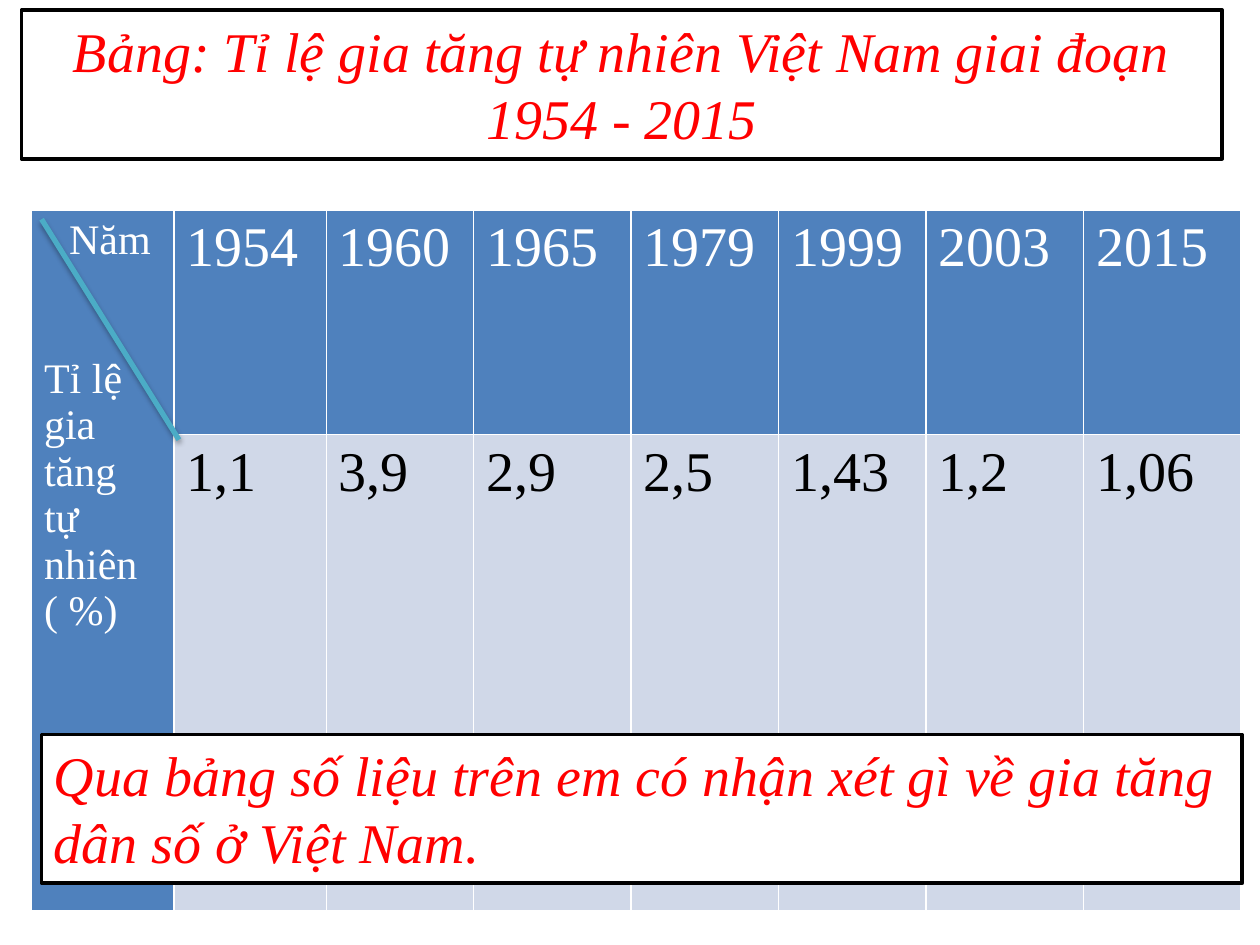
import lxml.etree
import pptx
import pptx.dml.color
import pptx.enum.shapes
import pptx.enum.text
import pptx.oxml
import pptx.oxml.ns
import pptx.util

Inches = pptx.util.Inches
Pt = pptx.util.Pt
ALIGN = pptx.enum.text.PP_ALIGN


def color(hex_string):
    return pptx.dml.color.RGBColor.from_string(hex_string)


def write(paragraph, text, size, hex_string, italic=False, align=ALIGN.LEFT):
    paragraph.text = text
    paragraph.alignment = align
    font = paragraph.font
    formats = {"name": "Times New Roman", "size": Pt(size), "bold": False, "italic": italic}
    for run_font in (font, paragraph.runs[0].font):
        for name, value in formats.items():
            setattr(run_font, name, value)
        run_font.color.rgb = color(hex_string)


presentation = pptx.Presentation()
presentation.slide_width = Inches(10)
presentation.slide_height = Inches(7.5)
slide = presentation.slides.add_slide(presentation.slide_layouts[5])

# Growth rate table
rates = {
    "1954": "1,1",
    "1960": "3,9",
    "1965": "2,9",
    "1979": "2,5",
    "1999": "1,43",
    "2003": "1,2",
    "2015": "1,06",
}
column_widths = [1.13, 1.21, 1.17, 1.25, 1.17, 1.17, 1.25, 1.25]
row_heights = [1.78, 3.78]
table = slide.shapes.add_table(
    len(row_heights), len(column_widths), Inches(0.25), Inches(1.67),
    Inches(sum(column_widths)), Inches(sum(row_heights)),
).table
for column, width in zip(table.columns, column_widths):
    column.width = Inches(width)
for row, height in zip(table.rows, row_heights):
    row.height = Inches(height)

for column_index, (year, rate) in enumerate(rates.items(), start=1):
    cells = [(year, "4F81BD", "FFFFFF"), (rate, "D0D8E8", "000000")]
    for row_index, (text, fill, text_color) in enumerate(cells):
        cell = table.cell(row_index, column_index)
        cell.fill.solid()
        cell.fill.fore_color.rgb = color(fill)
        write(cell.text_frame.paragraphs[0], text, 32, text_color)

corner = table.cell(0, 0)
corner.merge(table.cell(1, 0))
corner.fill.solid()
corner.fill.fore_color.rgb = color("4F81BD")
write(corner.text_frame.paragraphs[0], " Năm ", 24, "FFFFFF", align=ALIGN.RIGHT)
for text, space in [("Tỉ lệ gia tăng tự nhiên", 53), ("( %)", 0)]:
    paragraph = corner.text_frame.add_paragraph()
    write(paragraph, text, 24, "FFFFFF")
    paragraph.space_before = Pt(space)

# Diagonal of the corner cell
diagonal = slide.shapes.add_connector(
    pptx.enum.shapes.MSO_CONNECTOR.STRAIGHT,
    Inches(0.33), Inches(1.74), Inches(1.42), Inches(3.49),
)
diagonal.line.color.rgb = color("4BACC6")
diagonal.line.width = Pt(3)
shadow = pptx.oxml.parse_xml(
    f'<a:effectLst {pptx.oxml.ns.nsdecls("a")}>'
    '<a:outerShdw blurRad="40000" dist="23000" dir="5400000" rotWithShape="0">'
    '<a:srgbClr val="000000"><a:alpha val="35000"/></a:srgbClr>'
    '</a:outerShdw></a:effectLst>'
)
diagonal._element.spPr.append(shadow)

# Framed title and question
title = slide.shapes.title
question = slide.shapes.add_textbox(0, 0, Inches(1), Inches(1))
boxes = [
    (title, 0.17, 0.08, ALIGN.CENTER,
     "Bảng: Tỉ lệ gia tăng tự nhiên Việt Nam giai đoạn 1954 - 2015"),
    (question, 0.33, 5.83, ALIGN.LEFT,
     "Qua bảng số liệu trên em có nhận xét gì về gia tăng dân số ở Việt Nam."),
]
for shape, left, top, align, text in boxes:
    position = {"left": left, "top": top, "width": 9.53, "height": 1.18}
    for name, value in position.items():
        setattr(shape, name, Inches(value))
    shape.fill.solid()
    shape.fill.fore_color.rgb = color("FFFFFF")
    shape.line.color.rgb = color("000000")
    shape.line.width = Pt(2)
    frame = shape.text_frame
    frame.word_wrap = True
    frame.auto_size = pptx.enum.text.MSO_AUTO_SIZE.SHAPE_TO_FIT_TEXT
    frame.vertical_anchor = pptx.enum.text.MSO_ANCHOR.TOP
    write(frame.paragraphs[0], text, 32, "FF0000", italic=True, align=align)

presentation.save("out.pptx")
